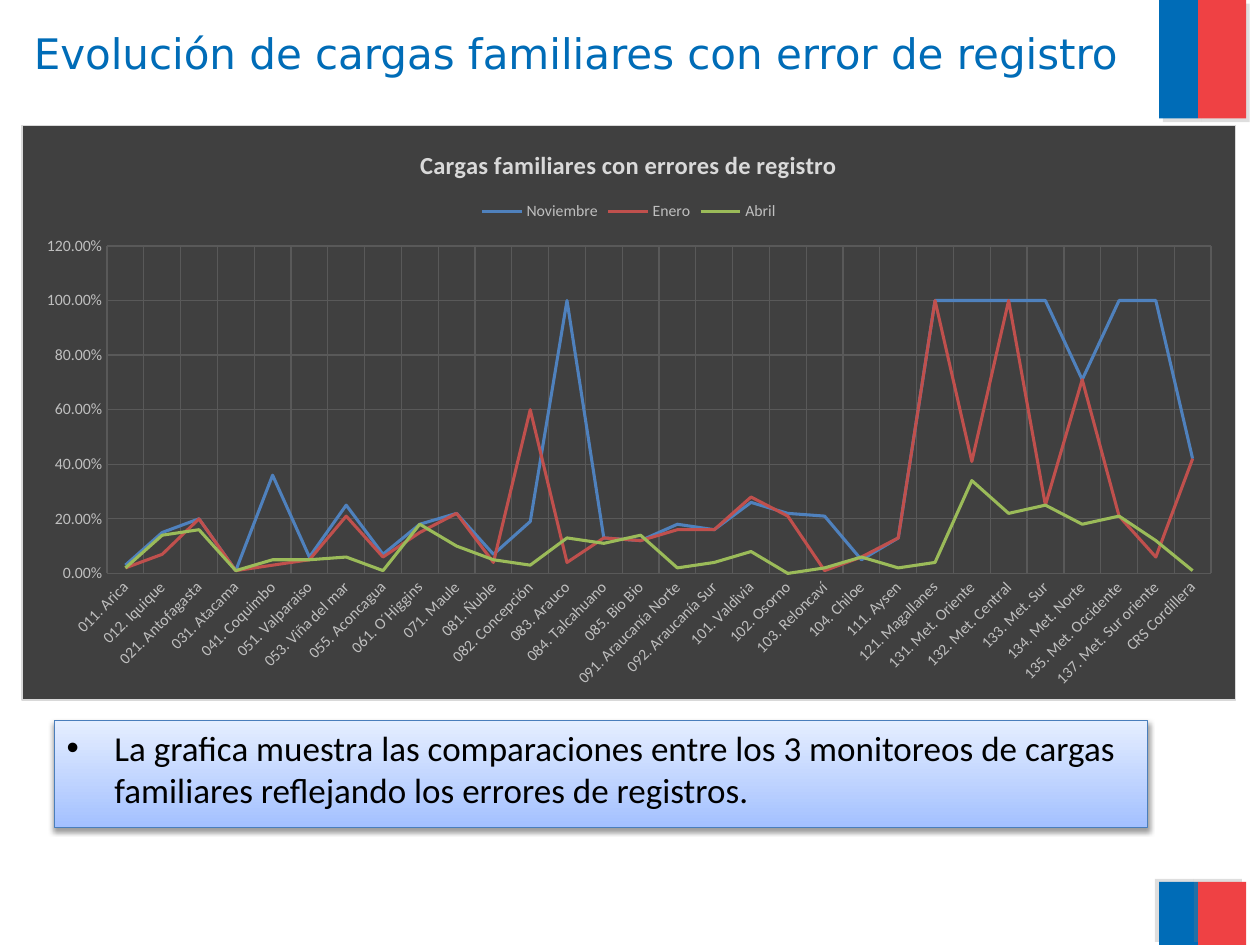
from lxml import etree
from pptx import Presentation
from pptx.chart.data import CategoryChartData
from pptx.dml.color import RGBColor
from pptx.enum.chart import XL_CHART_TYPE, XL_LEGEND_POSITION, XL_TICK_MARK
from pptx.enum.shapes import MSO_SHAPE
from pptx.oxml import parse_xml
from pptx.oxml.ns import nsdecls, qn
from pptx.util import Inches, Pt

RECTANGLE = MSO_SHAPE.RECTANGLE
LINE_CHART = XL_CHART_TYPE.LINE
LEGEND_TOP = XL_LEGEND_POSITION.TOP
NO_TICK = XL_TICK_MARK.NONE

GRID = Inches(0.1)
COLUMNS, ROWS = 100, 75

BLUE = RGBColor(0x00, 0x6C, 0xB7)
RED = RGBColor(0xEF, 0x41, 0x44)
BLACK = RGBColor(0x00, 0x00, 0x00)
CHARCOAL = RGBColor(0x40, 0x40, 0x40)
GRID_GREY = RGBColor(0x59, 0x59, 0x59)
LABEL_GREY = RGBColor(0xBF, 0xBF, 0xBF)
LIGHT_GREY = RGBColor(0xD9, 0xD9, 0xD9)
BOX_TOP = RGBColor(0xE5, 0xEE, 0xFF)
BOX_BOTTOM = RGBColor(0xA3, 0xC0, 0xFF)
BOX_LINE = RGBColor(0x4A, 0x7E, 0xBB)
NOVEMBER_BLUE = RGBColor(0x4F, 0x81, 0xBD)
JANUARY_RED = RGBColor(0xC0, 0x50, 0x4D)
APRIL_GREEN = RGBColor(0x9B, 0xBB, 0x59)

TITLE_FONT = "DejaVu Sans"
BODY_FONT = "Calibri"

OFFICES = [
    "011. Arica", "012. Iquique", "021. Antofagasta", "031. Atacama", "041. Coquimbo",
    "051. Valparaiso", "053. Viña del mar", "055. Aconcagua", "061. O´Higgins", "071. Maule",
    "081. Ñuble", "082. Concepción", "083. Arauco", "084. Talcahuano", "085. Bio Bio",
    "091. Araucanía Norte", "092. Araucanía Sur", "101. Valdivia", "102. Osorno",
    "103. Reloncaví", "104. Chiloe", "111. Aysen", "121. Magallanes", "131. Met. Oriente",
    "132. Met. Central", "133. Met. Sur", "134. Met. Norte", "135. Met. Occidente",
    "137. Met. Sur oriente", "CRS Cordillera",
]
MONTHS = [
    ("Noviembre", NOVEMBER_BLUE, [
        0.03, 0.15, 0.2, 0.01, 0.36, 0.06, 0.25, 0.07, 0.18, 0.22, 0.07, 0.19, 1, 0.13, 0.12,
        0.18, 0.16, 0.26, 0.22, 0.21, 0.05, 0.13, 1, 1, 1, 1, 0.71, 1, 1, 0.42]),
    ("Enero", JANUARY_RED, [
        0.02, 0.07, 0.2, 0.01, 0.03, 0.05, 0.21, 0.06, 0.15, 0.22, 0.04, 0.6, 0.04, 0.13, 0.12,
        0.16, 0.16, 0.28, 0.21, 0.01, 0.06, 0.13, 1, 0.41, 1, 0.25, 0.71, 0.21, 0.06, 0.42]),
    ("Abril", APRIL_GREEN, [
        0.02, 0.14, 0.16, 0.01, 0.05, 0.05, 0.06, 0.01, 0.18, 0.1, 0.05, 0.03, 0.13, 0.11, 0.14,
        0.02, 0.04, 0.08, 0, 0.02, 0.06, 0.02, 0.04, 0.34, 0.22, 0.25, 0.18, 0.21, 0.12, 0.01]),
]


def cells(*counts):
    """Turn counts of grid columns and rows into lengths."""
    return [round(count * GRID) for count in counts]


def set_font(font, size, color, name=BODY_FONT, bold=False):
    """Format a font."""
    font.size, font.name, font.bold = Pt(size), name, bold
    font.color.rgb = color


def cast_shadow(shape, color, opacity, distance, angle, blur=0):
    """Give a shape an outer shadow."""
    shape.shadow.inherit = False
    effects = shape._element.spPr.find(qn("a:effectLst"))
    outer = etree.SubElement(
        effects, qn("a:outerShdw"), blurRad=str(Pt(blur)), dist=str(Pt(distance)),
        dir=str(angle * 60000), algn="ctr", rotWithShape="0")
    shade = etree.SubElement(outer, qn("a:srgbClr"), val=color)
    etree.SubElement(shade, qn("a:alpha"), val=str(opacity * 1000))


def add_flag(page, top, height, shadow_angle):
    """Draw a pair of blue and red bands at the right edge."""
    for left, width, color in ((92, 3.1, BLUE), (95.1, 3.8, RED)):
        band = page.shapes.add_shape(RECTANGLE, *cells(left, top, width, height))
        band.fill.solid()
        band.fill.fore_color.rgb = color
        band.line.fill.background()
        cast_shadow(band, "808080", 25, 3, shadow_angle)


def add_text(page, text, area, bullet=False, **style):
    """Add a wrapped text box with one paragraph."""
    box = page.shapes.add_textbox(*cells(*area))
    box.text_frame.word_wrap = True
    para = box.text_frame.paragraphs[0]
    if bullet:
        indent = Inches(0.38)
        properties = para._p.get_or_add_pPr()
        properties.set("marL", str(indent))
        properties.set("indent", str(-indent))
        etree.SubElement(properties, qn("a:buFont"), typeface="Arial")
        etree.SubElement(properties, qn("a:buChar"), char="•")
    span = para.add_run()
    span.text = text
    set_font(span.font, **style)
    return box


def decorate_note(box):
    """Fill the note with a vertical gradient, an outline and a soft shadow."""
    box.fill.gradient()
    box.fill.gradient_angle = 270
    for stop, color in zip(box.fill.gradient_stops, (BOX_TOP, BOX_BOTTOM)):
        stop.color.rgb = color
    box.line.color.rgb = BOX_LINE
    box.line.width = Pt(0.75)
    cast_shadow(box, "000000", 38, 1.6, 90, blur=3.2)


def style_axis(axis):
    """Show grey labels and gridlines without an axis line."""
    axis.major_tick_mark = axis.minor_tick_mark = NO_TICK
    axis.format.line.fill.background()
    axis.has_major_gridlines = True
    axis.major_gridlines.format.line.color.rgb = GRID_GREY
    axis.major_gridlines.format.line.width = Pt(0.75)
    set_font(axis.tick_labels.font, 9, LABEL_GREY)


def frame_chart(chart):
    """Set the chart's background, border and plot position."""
    chart._chartSpace.find(qn("c:chart")).addnext(parse_xml(
        f'<c:spPr {nsdecls("c", "a")}>'
        f'<a:solidFill><a:srgbClr val="{CHARCOAL}"/></a:solidFill>'
        f'<a:ln w="{Pt(0.75)}"><a:solidFill><a:srgbClr val="{LIGHT_GREY}"/></a:solidFill></a:ln>'
        '</c:spPr>'))
    area = chart._chartSpace.find(".//" + qn("c:plotArea"))
    for old in area.findall(qn("c:layout")):
        area.remove(old)
    layout = etree.Element(qn("c:layout"))
    manual = etree.SubElement(layout, qn("c:manualLayout"))
    for tag, value in (("layoutTarget", "inner"), ("xMode", "edge"), ("yMode", "edge"),
                       ("x", "0.07"), ("y", "0.21"), ("w", "0.91"), ("h", "0.57")):
        etree.SubElement(manual, qn("c:" + tag), val=value)
    area.insert(0, layout)


def add_error_chart(page, title, area):
    """Add the line chart of errors by office and month."""
    data = CategoryChartData(number_format="0.00%")
    data.categories = OFFICES
    for name, _, values in MONTHS:
        data.add_series(name, values)
    chart = page.shapes.add_chart(LINE_CHART, *cells(*area), data).chart
    set_font(chart.font, 10, BLACK)
    frame_chart(chart)

    chart.has_title = True
    span = chart.chart_title.text_frame.paragraphs[0].add_run()
    span.text = title
    set_font(span.font, 14, LIGHT_GREY, bold=True)
    chart.chart_title.include_in_layout = False

    chart.has_legend = True
    chart.legend.position = LEGEND_TOP
    chart.legend.include_in_layout = False
    set_font(chart.legend.font, 9, LABEL_GREY)

    for axis in (chart.category_axis, chart.value_axis):
        style_axis(axis)
    labels = chart.category_axis._element.find(qn("c:txPr"))
    labels.find(qn("a:bodyPr")).set("rot", str(-45 * 60000))
    chart.value_axis.minimum_scale, chart.value_axis.maximum_scale = 0, 1.2
    chart.value_axis.major_unit = 0.2
    chart.value_axis.tick_labels.number_format = "0.00%"
    chart.value_axis.tick_labels.number_format_is_linked = False

    chart.plots[0].vary_by_categories = False
    for series, (_, color, _) in zip(chart.plots[0].series, MONTHS):
        series.smooth = False
        series.format.line.color.rgb = color
        series.format.line.width = Pt(1.75)


def main():
    """Build and save the slide."""
    deck = Presentation()
    deck.slide_width, deck.slide_height = cells(COLUMNS, ROWS)
    page = deck.slides.add_slide(deck.slide_layouts[6])
    add_flag(page, 0, 9.4, 45)
    add_flag(page, 70, 5, 215)
    add_text(page, "Evolución de cargas familiares con error de registro",
             (1.7, 1.7, 89.3, 12.5), size=24, color=BLUE, name=TITLE_FONT)
    note = add_text(page, "La grafica muestra las comparaciones entre los 3 monitoreos de cargas "
                    "familiares reflejando los errores de registros.",
                    (4.3, 57.2, 86.8, 8.5), bullet=True, size=20, color=BLACK)
    decorate_note(note)
    add_error_chart(page, "Cargas familiares con errores de registro", (1.7, 9.9, 96.4, 45.7))
    deck.save("out.pptx")


if __name__ == "__main__":
    main()
